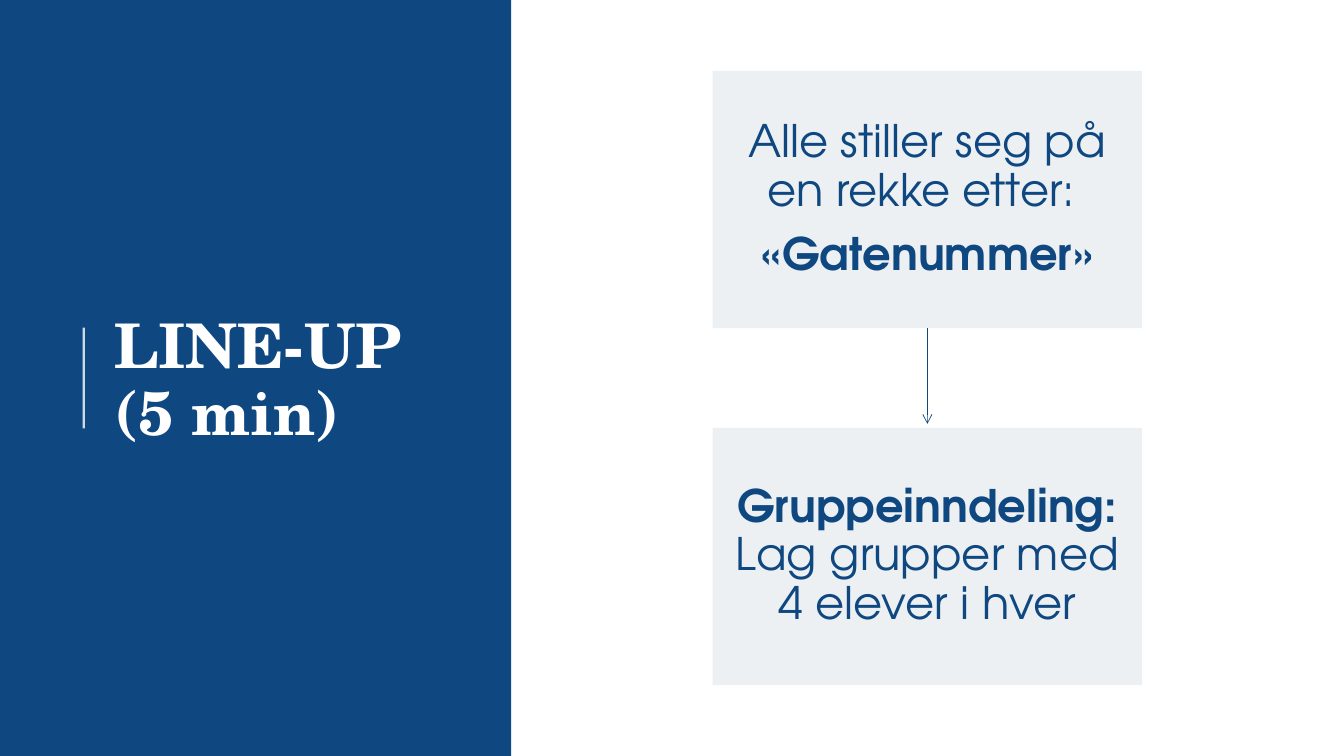
from dataclasses import dataclass

from lxml.etree import SubElement
from pptx import Presentation
from pptx.dml.color import RGBColor
from pptx.enum.shapes import MSO_CONNECTOR, MSO_SHAPE
from pptx.enum.text import MSO_ANCHOR, MSO_AUTO_SIZE, PP_ALIGN
from pptx.oxml.ns import qn
from pptx.util import Cm, Pt


@dataclass(frozen=True)
class Theme:
    navy: RGBColor = RGBColor(0x0F, 0x48, 0x81)
    white: RGBColor = RGBColor(0xFF, 0xFF, 0xFF)
    mist: RGBColor = RGBColor(0xED, 0xF0, 0xF3)
    title_font: str = "TeX Gyre Schola"
    body_font: str = "TeX Gyre Adventor"
    title_size: Pt = Pt(44)
    body_size: Pt = Pt(32)
    line_spacing: float = 0.9
    step_gap: Pt = Pt(11.2)


THEME = Theme()
STEPS = [
    [[("Alle stiller seg på en rekke etter: ", False)], [("«Gatenummer»", True)]],
    [[("Gruppeinndeling:", True), (" Lag grupper med 4 elever i hver", False)]],
]


def style_run(run, font, size, color, bold):
    run.font.name = font
    run.font.size = size
    run.font.color.rgb = color
    run.font.bold = bold


def add_block(slide, left, top, width, height, color):
    block = slide.shapes.add_shape(MSO_SHAPE.RECTANGLE, left, top, width, height)
    block.shadow.inherit = False
    block.fill.solid()
    block.fill.fore_color.rgb = color
    block.line.fill.background()
    return block


def add_rule(slide, x, top, bottom, color, weight):
    rule = slide.shapes.add_connector(MSO_CONNECTOR.STRAIGHT, x, top, x, bottom)
    rule.line.color.rgb = color
    rule.line.width = weight
    SubElement(rule._element.spPr, qn("a:effectLst"))
    return rule


def add_title_panel(slide, left, top, width, height):
    add_block(slide, left, top, width, height, THEME.navy)

    middle = top + height // 2
    accent = add_rule(slide, left + Cm(2.11), middle - Cm(1.27), middle + Cm(1.27),
                      THEME.white, Pt(1.5))
    accent_color = accent.line._ln.find(".//" + qn("a:srgbClr"))
    SubElement(accent_color, qn("a:alpha"), val="80000")

    title = slide.shapes.title
    title.left, title.top = left + Cm(2.62), top + Cm(1.98)
    title.width, title.height = Cm(9.37), Cm(15.29)
    slide.shapes._spTree.append(title._element)
    frame = title.text_frame
    frame.word_wrap = True
    frame.auto_size = MSO_AUTO_SIZE.NONE
    frame.vertical_anchor = MSO_ANCHOR.MIDDLE
    heading = frame.paragraphs[0]
    heading.alignment = PP_ALIGN.LEFT
    heading.line_spacing = THEME.line_spacing
    for index, line in enumerate(["LINE-UP", "(5 min)"]):
        if index:
            heading.add_line_break()
        run = heading.add_run()
        run.text = line
        style_run(run, THEME.title_font, THEME.title_size, THEME.white, True)


def add_step(slide, left, top, width, height, paragraphs):
    step = add_block(slide, left, top, width, height, THEME.mist)
    frame = step.text_frame
    frame.word_wrap = True
    frame.vertical_anchor = MSO_ANCHOR.MIDDLE
    frame.margin_left = frame.margin_right = Cm(0.53)
    frame.margin_top = frame.margin_bottom = Cm(0.56)
    for index, pieces in enumerate(paragraphs):
        paragraph = frame.add_paragraph() if index else frame.paragraphs[0]
        paragraph.alignment = PP_ALIGN.CENTER
        paragraph.line_spacing = THEME.line_spacing
        paragraph.space_after = THEME.step_gap
        for text, bold in pieces:
            run = paragraph.add_run()
            run.text = text
            style_run(run, THEME.body_font, THEME.body_size, THEME.navy, bold)
    return step


def add_flow(slide, left, top, width, height):
    step_height = Cm(6.48)
    pitch = (height - step_height) // (len(STEPS) - 1)
    previous = None
    for index, paragraphs in enumerate(STEPS):
        step_top = top + index * pitch
        step = add_step(slide, left, step_top, width, step_height, paragraphs)
        if previous is not None:
            arrow = add_rule(slide, left + width // 2, previous.top + step_height,
                             step_top - Cm(0.1), THEME.navy, Pt(0.5))
            arrow.begin_connect(previous, 2)
            SubElement(arrow.line._ln, qn("a:tailEnd"), type="arrow")
        previous = step


def main():
    deck = Presentation()
    deck.slide_width, deck.slide_height = Cm(33.87), Cm(19.05)
    slide = deck.slides.add_slide(deck.slide_layouts[5])
    add_title_panel(slide, Cm(0), Cm(0), Cm(12.88), deck.slide_height)
    add_flow(slide, Cm(17.96), Cm(1.79), Cm(10.82), Cm(15.47))
    deck.save("out.pptx")


if __name__ == "__main__":
    main()
